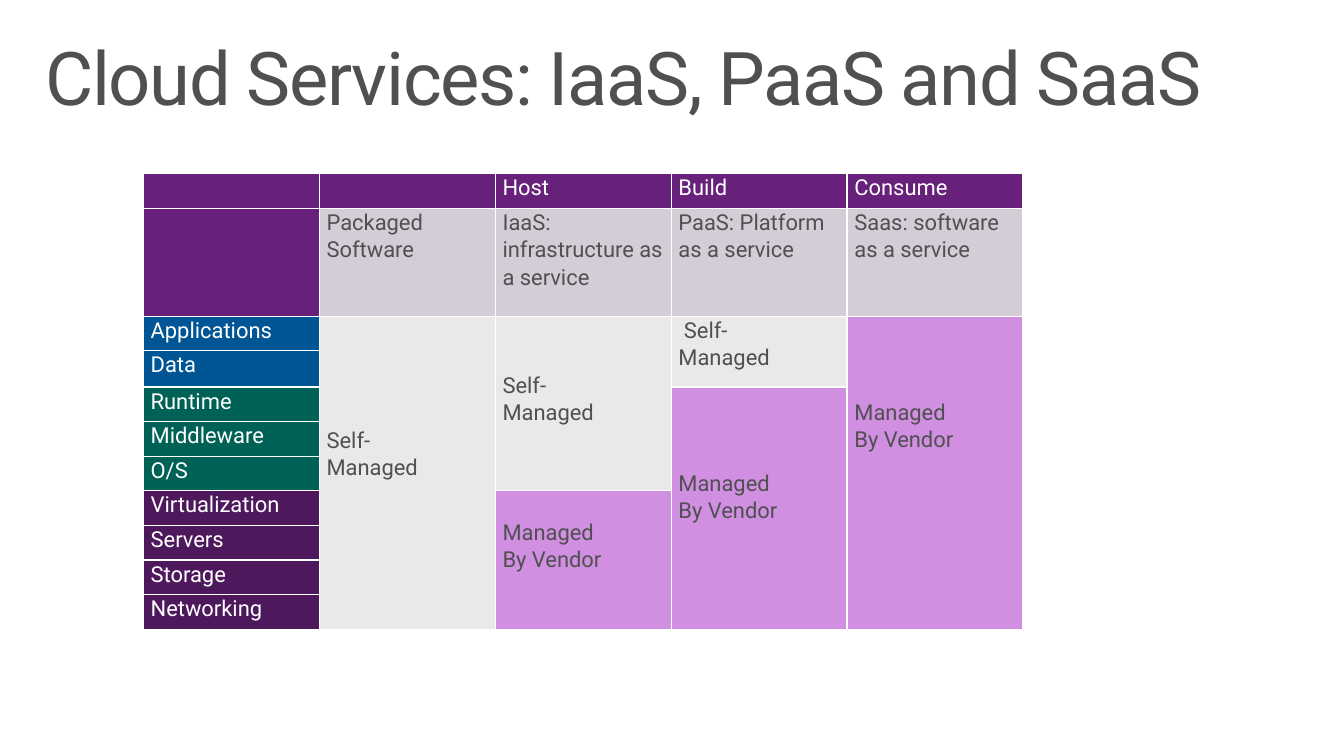
"""Build the slide that compares cloud service models."""
from lxml.etree import SubElement
from pptx import Presentation
from pptx.dml.color import RGBColor
from pptx.oxml.ns import qn
from pptx.util import Pt

WHITE, GREY = "FFFFFF", "505050"
PURPLE, MAUVE, PALE, PINK = "68217A", "D4CDD7", "EBE8EC", "D08FE1"
BLUE, GREEN, PLUM = "005694", "006256", "4E195C"
LINE = 20

HEADS = ["", "", "Host", "Build", "Consume"]
MODELS = ["Packaged Software", "IaaS: infrastructure as a service",
          "PaaS: Platform as a service", "Saas: software as a service"]
LAYERS = [("Applications", BLUE), ("Data", BLUE), ("Runtime", GREEN),
          ("Middleware", GREEN), ("O/S", GREEN), ("Virtualization", PLUM),
          ("Servers", PLUM), ("Storage", PLUM), ("Networking", PLUM)]
SELF, VENDOR = "Self-\nManaged", "Managed\nBy Vendor"
BLOCKS = [(2, 1, 9, SELF, PALE, 4), (2, 2, 5, SELF, PALE, 2),
          (2, 3, 2, " " + SELF, PALE, 0), (2, 4, 9, VENDOR, PINK, 3),
          (4, 3, 7, VENDOR, PINK, 3), (7, 2, 4, VENDOR, PINK, 1)]


def tint(code):
    return RGBColor.from_string(code)


class Deck:
    """Holds the font and the current slide."""

    def __init__(self, wide, high, font):
        self.show = Presentation()
        self.show.slide_width, self.show.slide_height = Pt(wide), Pt(high)
        self.slide = self.show.slides.add_slide(self.show.slide_layouts[6])
        self.font = font

    def style(self, para, size, color, space):
        para.font.name = self.font
        para.font.size = Pt(size)
        para.font.color.rgb = tint(color)
        para.line_spacing = space

    def title(self, text, left, top, wide, high):
        frame = self.slide.shapes.add_textbox(
            Pt(left), Pt(top), Pt(wide), Pt(high)).text_frame
        frame.word_wrap = True
        frame.margin_left = frame.margin_right = Pt(11.5)
        frame.margin_top = frame.margin_bottom = Pt(7.2)
        para = frame.paragraphs[0]
        run = para.add_run()
        run.text = text
        run._r.get_or_add_rPr().set("spc", "-100")
        self.style(para, 54, GREY, 0.9)

    def table(self, left, top, wide, rows, cols):
        grid = self.slide.shapes.add_table(
            len(rows), cols, Pt(left), Pt(top), Pt(wide * cols), Pt(sum(rows))).table
        grid.first_row = grid.horz_banding = False
        for col in grid.columns:
            col.width = Pt(wide)
        for row, high in zip(grid.rows, rows):
            row.height = Pt(high)
        for cell in grid.iter_cells():
            self.edge(cell)
        return grid

    def edge(self, cell):
        props = cell._tc.get_or_add_tcPr()
        for side in "LRTB":
            line = SubElement(props, qn("a:ln" + side), w=str(Pt(1)))
            fill = SubElement(line, qn("a:solidFill"))
            SubElement(fill, qn("a:srgbClr"), val=WHITE)

    def cell(self, cell, text, fill, color, skip=0):
        cell.fill.solid()
        cell.fill.fore_color.rgb = tint(fill)
        cell.margin_left = cell.margin_right = Pt(5.4)
        cell.margin_top, cell.margin_bottom = Pt(skip * LINE), Pt(0)
        cell.text_frame.text = text
        for para in cell.text_frame.paragraphs:
            self.style(para, 16, color, 1.07)


def main():
    deck = Deck(979.2, 550.8, "Roboto")
    deck.title("Cloud Services: IaaS, PaaS and SaaS", 21.6, 23, 936, 72)
    rows = [25.2, 78.5, 25.2, 26.4] + [25.2] * 7
    grid = deck.table(104.4, 126.7, 128.2, rows, len(HEADS))
    for col, text in enumerate(HEADS):
        deck.cell(grid.cell(0, col), text, PURPLE, WHITE)
    deck.cell(grid.cell(1, 0), "", PURPLE, WHITE)
    for col, text in enumerate(MODELS, 1):
        deck.cell(grid.cell(1, col), text, MAUVE, GREY)
    for row, (text, fill) in enumerate(LAYERS, 2):
        deck.cell(grid.cell(row, 0), text, fill, WHITE)
    for row, col, span, text, fill, skip in BLOCKS:
        cell = grid.cell(row, col)
        cell.merge(grid.cell(row + span - 1, col))
        deck.cell(cell, text, fill, GREY, skip)
    deck.show.save("out.pptx")


if __name__ == "__main__":
    main()
